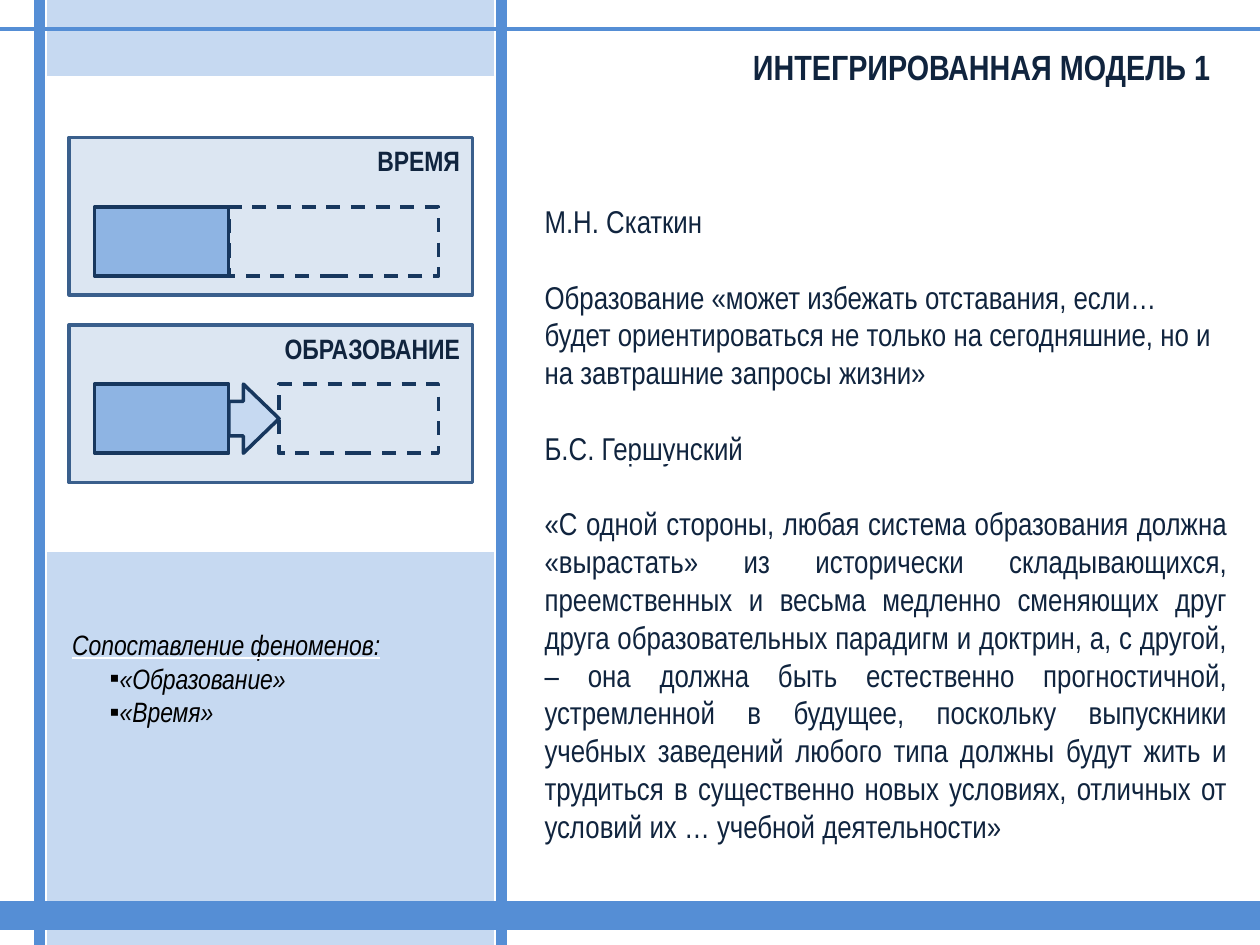
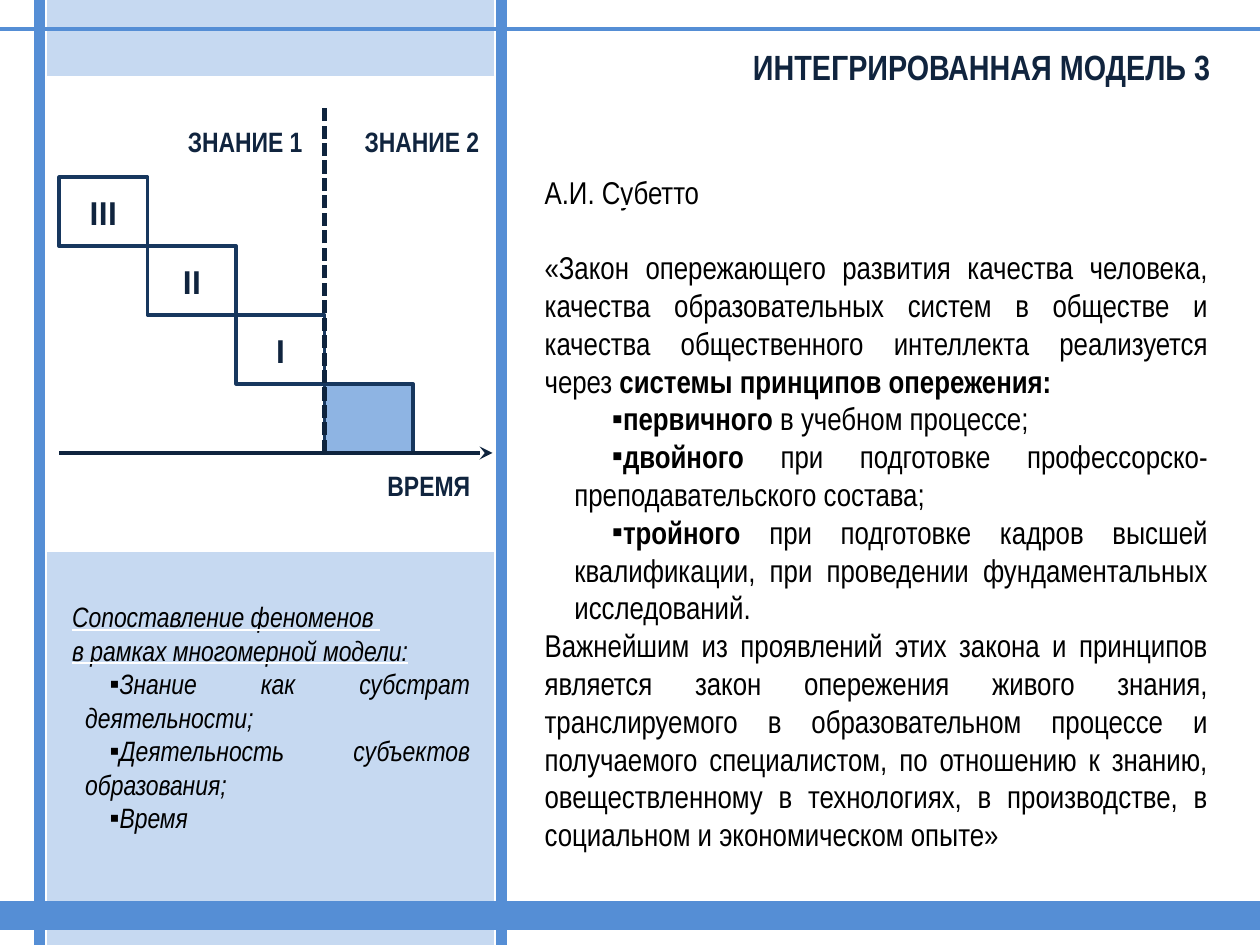
from lxml.etree import SubElement as Sub, Element
from pptx import Presentation
from pptx.dml.color import RGBColor
from pptx.enum.dml import MSO_LINE as Dash
from pptx.enum.shapes import MSO_CONNECTOR as Wire, MSO_SHAPE as Form
from pptx.enum.text import MSO_ANCHOR as Anchor, MSO_AUTO_SIZE as Auto, PP_ALIGN as Align
from pptx.oxml.ns import qn
from pptx.util import Pt

INK, NAVY, BLACK, WHITE = "10243E", "17375E", "000000", "FFFFFF"
RAIL, PALE, CARD, RIM, FULL = "558ED5", "C6D9F1", "DCE6F2", "3A5F8C", "8EB4E3"
AXIS = "0F243E"
FONT, ROMAN = "Arial Narrow", "Calibri"
WIDE, HIGH = 720, 540
LEFT, RIGHT = 22.5, 286.75

# Paragraph marks: j justified, * bulleted, + one line of space above.
# Run marks: b bold, u underlined.
SLIDES = [
    {
        "title": "ИНТЕГРИРОВАННАЯ МОДЕЛЬ 1 ",
        "ink": INK,
        "main": (304, 122.5, 404.5, 353),
        "side": (34, 349, 242, 77),
        "text": [
            ("", [("М.Н. Скаткин", "u")]),
            ("+", [("Образование «может избежать отставания, если… будет "
                    "ориентироваться не только на сегодняшние, но и на "
                    "завтрашние запросы жизни»", "")]),
            ("+", [("Б.С. Гершунский", "u")]),
            ("+j", [("«С одной стороны, любая система образования должна "
                     "«вырастать» из исторически складывающихся, преемственных "
                     "и весьма медленно сменяющих друг друга образовательных "
                     "парадигм и доктрин, а, с другой, – она должна быть "
                     "естественно прогностичной, устремленной в будущее, "
                     "поскольку выпускники учебных заведений любого типа должны "
                     "будут жить и трудиться в существенно новых условиях, "
                     "отличных от условий их … учебной деятельности»", "")]),
        ],
        "note": [
            ("", [("Сопоставление феноменов:", "u")]),
            ("*", [("«Образование»", "")]),
            ("*", [("«Время»", "")]),
        ],
    },
    {
        "title": "ИНТЕГРИРОВАННАЯ МОДЕЛЬ 3 ",
        "ink": BLACK,
        "main": (304, 78, 393.5, 430),
        "side": (34, 327, 242, 165.5),
        "text": [
            ("", [("А.И. Субетто", "u")]),
            ("+j", [("«Закон опережающего развития качества человека, качества "
                     "образовательных систем в обществе и качества общественного "
                     "интеллекта реализуется через ", ""),
                    ("системы принципов опережения:", "b")]),
            ("j*", [("первичного ", "b"), ("в учебном процессе;", "")]),
            ("j*", [("двойного", "b"), (" при подготовке "
                    "профессорско-преподавательского состава;", "")]),
            ("j*", [("тройного", "b"), (" при подготовке кадров высшей "
                    "квалификации, при проведении фундаментальных "
                    "исследований.", "")]),
            ("j", [("Важнейшим из проявлений этих закона и принципов является "
                    "закон опережения живого знания, транслируемого в "
                    "образовательном процессе и получаемого специалистом, по "
                    "отношению к знанию, овеществленному в технологиях, в "
                    "производстве, в социальном и экономическом опыте»", "")]),
        ],
        "note": [
            ("j", [("Сопоставление феноменов ", "u")]),
            ("j", [("в рамках многомерной модели:", "u")]),
            ("j*", [("Знание как субстрат деятельности;", "")]),
            ("j*", [("Деятельность субъектов образования;", "")]),
            ("j*", [("Время", "")]),
        ],
    },
]
CARDS = [("ВРЕМЯ", 78.5, 118.25, 0), ("ОБРАЗОВАНИЕ", 185.75, 219.5, 28.75)]
STEPS = ["III", "II", "I", ""]
LABELS = [("ЗНАНИЕ 1", 180, 67.75), ("ЗНАНИЕ 2", 281, 67.75), ("ВРЕМЯ", 275.75, 264.25)]


def tint(code):
    """Turn a hex string into a colour."""
    return RGBColor.from_string(code)


def write(para, text, size, ink, marks="", font=FONT):
    """Add one formatted run to a paragraph."""
    run = para.add_run()
    run.text = text
    face = run.font
    face.size, face.name, face.color.rgb = Pt(size), font, tint(ink)
    face.bold, face.italic = "b" in marks, "i" in marks
    face.underline = "u" in marks
    if "u" in marks:
        under = Element(qn("a:uFill"))
        Sub(Sub(under, qn("a:solidFill")), qn("a:srgbClr"), val=WHITE)
        run._r.rPr.find(qn("a:solidFill")).addnext(under)


def place(shape, box):
    """Set the position and size of a shape."""
    shape.left, shape.top, shape.width, shape.height = map(Pt, box)


def block(slide, form, box, fill=None, edge=NAVY, dash=None):
    """Draw a preset shape with a plain fill and outline."""
    shape = slide.shapes.add_shape(form, *map(Pt, box))
    shape.shadow.inherit = False
    if fill:
        shape.fill.solid()
        shape.fill.fore_color.rgb = tint(fill)
    else:
        shape.fill.background()
    shape.line.color.rgb, shape.line.width = tint(edge), Pt(2)
    if dash:
        shape.line.dash_style = dash
    return shape


def rule(slide, start, end, width, ink=RAIL):
    """Draw a straight line without a shadow."""
    line = slide.shapes.add_connector(Wire.STRAIGHT, *map(Pt, start + end))
    line.line.color.rgb, line.line.width = tint(ink), Pt(width)
    Sub(line._element.spPr, qn("a:effectLst"))
    return line


def label(shape, text, size=16, align=Align.RIGHT, anchor=Anchor.TOP, font=FONT):
    """Put one bold line of text in a shape."""
    frame = shape.text_frame
    frame.word_wrap, frame.auto_size = True, Auto.NONE
    frame.vertical_anchor = anchor
    para = frame.paragraphs[0]
    para.alignment = align
    write(para, text, size, INK, "b", font)


def fill_list(shape, paras, size, ink, inset, first, extra=""):
    """Fill a body placeholder with marked paragraphs."""
    frame = shape.text_frame
    frame.word_wrap, frame.auto_size = True, Auto.NONE
    frame.vertical_anchor = Anchor.MIDDLE
    for pos, (kind, runs) in enumerate(paras):
        para = frame.add_paragraph() if pos else frame.paragraphs[0]
        para.alignment = Align.JUSTIFY if "j" in kind else Align.LEFT
        para.space_before = Pt(size * 1.2 if "+" in kind else 0)
        item = "*" in kind
        props = para._p.get_or_add_pPr()
        props.set("marL", str(Pt(inset if item else 0)))
        props.set("indent", str(Pt(first if item else 0)))
        if item:
            Sub(Sub(props, qn("a:buClr")), qn("a:srgbClr"), val=BLACK)
            Sub(props, qn("a:buFont"), typeface="Arial")
            Sub(props, qn("a:buChar"), char="▪")
        else:
            Sub(props, qn("a:buNone"))
        for text, marks in runs:
            write(para, text, size, ink, marks + extra)


def draw_cards(slide):
    """Compare time and education as two cards."""
    left, width, high, end = 54, 76.75, 39.5, 250.5
    for name, top, row, gap in CARDS:
        card = block(slide, Form.RECTANGLE, (39.5, top, 230.5, 90), CARD, RIM)
        label(card, name)
        block(slide, Form.RECTANGLE, (left, row, width, high), FULL)
        edge = left + width
        start = edge + gap
        block(slide, Form.RECTANGLE, (start, row, end - start, high), dash=Dash.DASH)
        if gap:
            arrow = block(slide, Form.RIGHT_ARROW, (edge, row, gap, high), PALE)
            arrow.adjustments[0], arrow.adjustments[1] = 0.5, 0.71


def draw_steps(slide):
    """Show knowledge levels descending to the time axis."""
    left, top, width, high = 33.75, 101.25, 50.6, 39.4
    for pos, name in enumerate(STEPS):
        box = (left + pos * width, top + pos * high, width, high)
        step = block(slide, Form.RECTANGLE, box, None if name else FULL)
        if name:
            label(step, name, 20, Align.CENTER, Anchor.MIDDLE, ROMAN)
    base, now = top + len(STEPS) * high, left + 3 * width
    axis = rule(slide, (left, base), (281.5, base), 2.5, AXIS)
    Sub(axis.line._get_or_add_ln(), qn("a:tailEnd"), type="stealth")
    split = rule(slide, (now, base), (now, 62), 2.5, AXIS)
    split.line.dash_style = Dash.SQUARE_DOT
    for name, right, high in LABELS:
        box = slide.shapes.add_textbox(*map(Pt, (right - 84, high, 84, 26)))
        label(box, name)


def build(deck, data, draw):
    """Build one slide with the shared bands, texts and a diagram."""
    slide = deck.slides.add_slide(deck.slide_layouts[3])
    title, main, side = slide.placeholders
    block(slide, Form.RECTANGLE, (28, 0, 253.5, HIGH), PALE, PALE)
    rule(slide, (0, 16.75), (WIDE, 16.75), 2.25)
    rule(slide, (0, 523.25), (WIDE, 523.25), 16.25)
    place(title, (0, 22.5, 703.5, 31))
    label(title, data["title"], 20)
    place(main, data["main"])
    fill_list(main, data["text"], 18, data["ink"], 17, 21.5)
    place(side, data["side"])
    fill_list(side, data["note"], 16, BLACK, 7.5, 14, "i")
    block(slide, Form.RECTANGLE, (LEFT, 44.5, RIGHT - LEFT, 270), WHITE, WHITE)
    for shape in (title, main, side):
        slide.shapes._spTree.append(shape._element)
    draw(slide)
    for x in (LEFT, RIGHT):
        rule(slide, (x, 0), (x, HIGH), 6.5)


def main():
    """Build and save the presentation."""
    deck = Presentation()
    deck.slide_width, deck.slide_height = Pt(WIDE), Pt(HIGH)
    for data, draw in zip(SLIDES, (draw_cards, draw_steps)):
        build(deck, data, draw)
    deck.save("out.pptx")


if __name__ == "__main__":
    main()
